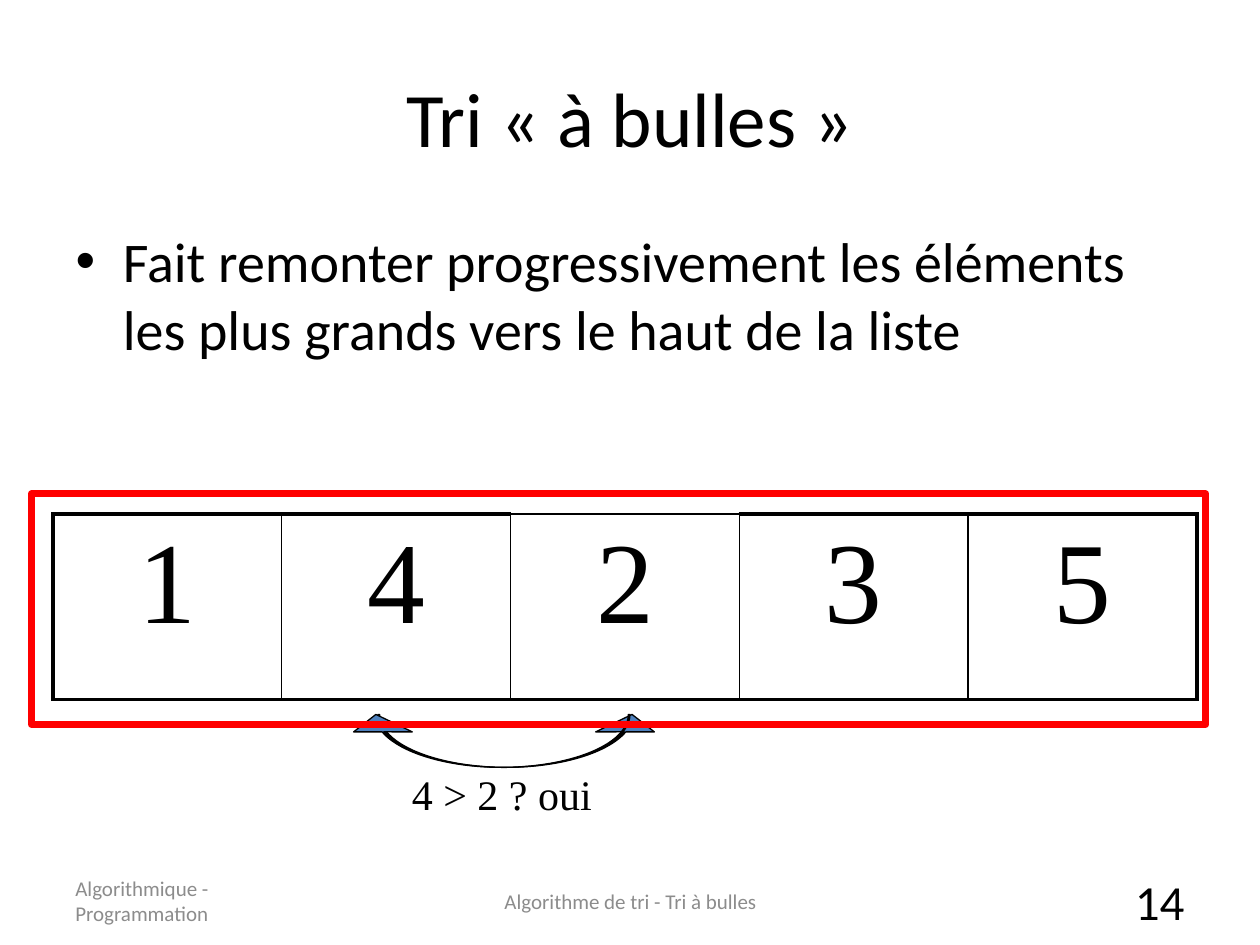
from dataclasses import dataclass

from lxml.etree import SubElement
from pptx import Presentation
from pptx.dml.color import RGBColor
from pptx.enum.shapes import MSO_SHAPE as Shape
from pptx.enum.text import MSO_ANCHOR as Anchor, MSO_AUTO_SIZE as AutoSize, PP_ALIGN as Align
from pptx.oxml.ns import qn
from pptx.util import Inches, Pt

COLORS = {"text": "000000", "muted": "8C8C8C", "arrow": "4F81BD", "frame": "FF0000"}
SANS, SERIF = "Calibri", "Times New Roman"
THIN, THICK = 1, 2.25


@dataclass
class Box:
    left: float
    top: float
    width: float
    height: float

    def lengths(self) -> list:
        return [Inches(v) for v in (self.left, self.top, self.width, self.height)]


@dataclass
class Label:
    text: str
    box: Box
    size: float
    font: str = SANS
    color: str = "muted"
    align: Align = Align.LEFT
    anchor: Anchor = Anchor.MIDDLE
    wrap: bool = True


@dataclass
class Arrow:
    left: float
    flipped: bool = False


@dataclass
class Cell:
    text: str
    left: float = THIN
    right: float = THIN
    top: float = THICK
    bottom: float = THICK


def rgb(name: str) -> RGBColor:
    return RGBColor.from_string(COLORS[name])


def style(p, size: float, font: str, color: str = "text", align: Align = Align.LEFT) -> None:
    p.alignment = align
    for r in p.runs:
        r.font.size = Pt(size)
        r.font.name = font
        r.font.color.rgb = rgb(color)


def fill_placeholder(sp, text: str, box: Box, size: float, align: Align) -> None:
    sp.left, sp.top, sp.width, sp.height = box.lengths()
    sp.text_frame.text = text
    style(sp.text_frame.paragraphs[0], size, SANS, align=align)


def add_label(shapes, label: Label) -> None:
    tf = shapes.add_textbox(*label.box.lengths()).text_frame
    tf.word_wrap = label.wrap
    tf.auto_size = AutoSize.NONE if label.wrap else AutoSize.SHAPE_TO_FIT_TEXT
    tf.vertical_anchor = label.anchor
    tf.text = label.text
    style(tf.paragraphs[0], label.size, label.font, label.color, label.align)


def set_borders(cell, widths: dict[str, float]) -> None:
    tcPr = cell._tc.get_or_add_tcPr()
    for i, (side, width) in enumerate(widths.items()):
        ln = SubElement(tcPr, qn(f"a:ln{side}"), w=str(Pt(width)))
        fill = SubElement(ln, qn("a:solidFill"))
        SubElement(fill, qn("a:srgbClr"), val=COLORS["text"])
        tcPr.insert(i, ln)


def add_list_table(shapes, cells: list[Cell], box: Box) -> None:
    table = shapes.add_table(1, len(cells), *box.lengths()).table
    table.first_row = table.horz_banding = False
    for i, item in enumerate(cells):
        cell = table.cell(0, i)
        cell.text = item.text
        cell.fill.background()
        p = cell.text_frame.paragraphs[0]
        p.space_before = Pt(13.2)
        style(p, 66, SERIF, align=Align.CENTER)
        set_borders(cell, {"L": item.left, "R": item.right, "T": item.top, "B": item.bottom})


def add_arrow(shapes, arrow: Arrow) -> None:
    s = shapes.add_shape(Shape.CURVED_UP_ARROW, *Box(arrow.left, 5.67, 2.25, 0.42).lengths())
    s.shadow.inherit = False
    for i, value in enumerate((0.03, 1.11, 0.33)):
        s.adjustments[i] = value
    s.fill.solid()
    s.fill.fore_color.rgb = rgb("arrow")
    s.line.color.rgb = rgb("text")
    s.line.width = Pt(0.75)
    if arrow.flipped:
        s._element.spPr.find(qn("a:xfrm")).set("flipH", "1")


def add_frame(shapes, box: Box) -> None:
    s = shapes.add_shape(Shape.RECTANGLE, *box.lengths())
    s.shadow.inherit = False
    s.fill.background()
    s.line.color.rgb = rgb("frame")
    s.line.width = Pt(4)


CELLS = [Cell("1", left=THICK), Cell("4"), Cell("2", top=THIN), Cell("3"), Cell("5", right=THICK)]
ARROWS = [Arrow(3), Arrow(2.75, flipped=True)]
LABELS = [
    Label("4 > 2 ? oui", Box(3.17, 6.05, 1.63, 0.5), 24, SERIF, "text",
          anchor=Anchor.TOP, wrap=False),
    Label("Algorithmique - Programmation", Box(0.5, 6.95, 2.33, 0.4), 12),
    Label("Algorithme de tri - Tri à bulles", Box(3.42, 6.95, 3.17, 0.4), 12, align=Align.CENTER),
    Label("14", Box(7.17, 6.95, 2.33, 0.4), 28, color="text", align=Align.RIGHT),
]


def main() -> None:
    prs = Presentation()
    prs.slide_width, prs.slide_height = Inches(10), Inches(7.5)
    slide = prs.slides.add_slide(prs.slide_layouts[1])
    shapes = slide.shapes
    fill_placeholder(shapes.title, "Tri « à bulles »", Box(0.5, 0.3, 9, 1.25), 44, Align.CENTER)
    fill_placeholder(
        slide.placeholders[1],
        "Fait remonter progressivement les éléments les plus grands vers le haut de la liste",
        Box(0.5, 1.75, 9, 4.95), 32, Align.LEFT)
    add_list_table(shapes, CELLS, Box(0.42, 4.08, 9.08, 1.47))
    for arrow in ARROWS:
        add_arrow(shapes, arrow)
    for label in LABELS:
        add_label(shapes, label)
    add_frame(shapes, Box(0.25, 3.92, 9.32, 1.83))
    prs.save("out.pptx")


if __name__ == "__main__":
    main()
